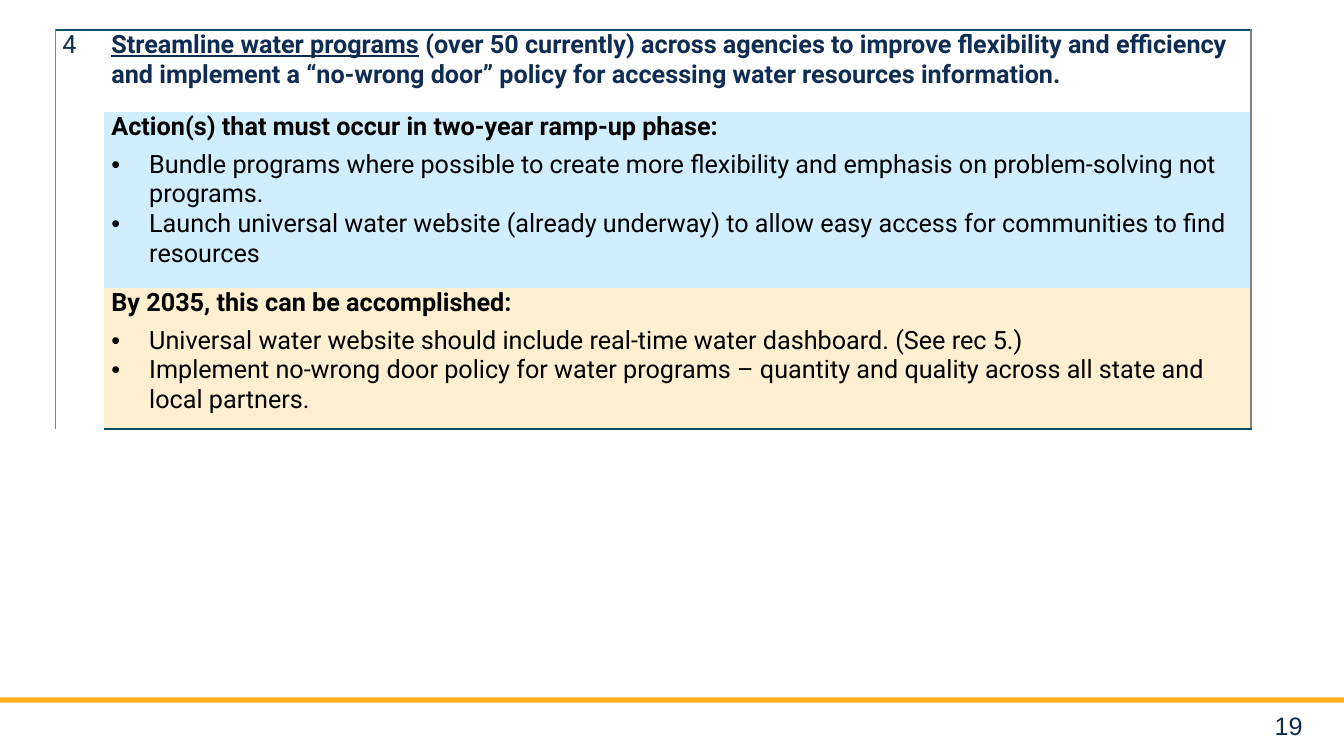
from dataclasses import dataclass

from lxml import etree
from pptx import Presentation
from pptx.dml.color import RGBColor
from pptx.enum import shapes, text
from pptx.oxml import ns
from pptx.util import Pt

COLORS = {
    "navy": "0F2D52",
    "black": "000000",
    "gold": "FCB31C",
    "sky": "D1EEFF",
    "cream": "FEEFD1",
    "rule": "074F6A",
    "edge": "808080",
}
NO_STYLE_NO_GRID = "{2D5ABB26-0587-4C30-8999-92F81FD0307C}"
COLUMN_WIDTHS = (35, 819)
ROW_HEIGHTS = (58.5, 125.5, 101)
HANGING = 27


@dataclass(frozen=True)
class Phase:
    heading: str
    actions: tuple[str, ...]
    fill: str


PHASES = (
    Phase(
        "Action(s) that must occur in two-year ramp-up phase:",
        (
            "Bundle programs where possible to create more flexibility and "
            "emphasis on problem-solving not programs.",
            "Launch universal water website (already underway) to allow easy "
            "access for communities to find resources",
        ),
        "sky",
    ),
    Phase(
        "By 2035, this can be accomplished:",
        (
            "Universal water website should include real-time water dashboard. (See rec 5.)",
            "Implement no-wrong door policy for water programs – quantity and "
            "quality across all state and local partners.",
        ),
        "cream",
    ),
)


def rgb(name: str) -> RGBColor:
    return RGBColor.from_string(COLORS[name])


def write(paragraph, words: str, *, color: str = "navy", font: str = "Roboto",
          bold: bool = False, underline: bool = False, after: float = 0) -> None:
    paragraph.space_after = Pt(after)
    run = paragraph.add_run()
    run.text = words
    run.font.name = font
    run.font.size = Pt(18)
    run.font.bold = bold
    run.font.underline = underline
    run.font.color.rgb = rgb(color)


def add_bullet(paragraph) -> None:
    properties = paragraph._p.get_or_add_pPr()
    properties.set("marL", str(Pt(HANGING)))
    properties.set("indent", str(-Pt(HANGING)))
    etree.SubElement(properties, ns.qn("a:buFont"), typeface="Arial")
    etree.SubElement(properties, ns.qn("a:buChar"), char="•")


def set_borders(cell, sides: dict[str, tuple[str, float]]) -> None:
    """Draw the given sides (L, R, T, B) and clear the others."""
    properties = cell._tc.get_or_add_tcPr()
    for position, side in enumerate("LRTB"):
        line = etree.Element(ns.qn(f"a:ln{side}"))
        properties.insert(position, line)
        if side in sides:
            color, width = sides[side]
            line.set("w", str(Pt(width)))
            fill = etree.SubElement(line, ns.qn("a:solidFill"))
            etree.SubElement(fill, ns.qn("a:srgbClr"), val=COLORS[color])
        else:
            line.set("w", "0")
            etree.SubElement(line, ns.qn("a:noFill"))


def format_cells(table) -> None:
    """Set margins, fills and the outer frame of the table."""
    last = len(ROW_HEIGHTS) - 1
    for row in range(last + 1):
        for column in range(len(COLUMN_WIDTHS)):
            cell = table.cell(row, column)
            cell.margin_left = cell.margin_right = Pt(5)
            cell.margin_top = cell.margin_bottom = Pt(0)
            if row and column:
                cell.fill.solid()
                cell.fill.fore_color.rgb = rgb(PHASES[row - 1].fill)
            else:
                cell.fill.background()
            sides = {"R" if column else "L": ("edge", 1)}
            if row == 0:
                sides["T"] = ("rule", 1.5)
            if row == last:
                sides["B"] = ("rule", 1.5)
            set_borders(cell, sides)


def add_recommendation(slide) -> None:
    table = slide.shapes.add_table(
        len(ROW_HEIGHTS), len(COLUMN_WIDTHS), Pt(39.6), Pt(21.6),
        Pt(sum(COLUMN_WIDTHS)), Pt(sum(ROW_HEIGHTS))).table
    table.first_row = table.horz_banding = False
    table._tbl.tblPr.find(ns.qn("a:tableStyleId")).text = NO_STYLE_NO_GRID
    for column, width in zip(table.columns, COLUMN_WIDTHS):
        column.width = Pt(width)
    for row, height in zip(table.rows, ROW_HEIGHTS):
        row.height = Pt(height)
    format_cells(table)

    number = table.cell(0, 0)
    number.merge(table.cell(len(ROW_HEIGHTS) - 1, 0))
    write(number.text_frame.paragraphs[0], "4", after=6)

    summary = table.cell(0, 1).text_frame.paragraphs[0]
    write(summary, "Streamline water programs", bold=True, underline=True, after=6)
    write(summary, " (over 50 currently) across agencies to improve flexibility and "
          "efficiency and implement a “no-wrong door” policy for accessing water "
          "resources information.", bold=True, after=6)

    for row, phase in enumerate(PHASES, start=1):
        frame = table.cell(row, 1).text_frame
        write(frame.paragraphs[0], phase.heading, color="black", bold=True, after=6)
        for action in phase.actions:
            item = frame.add_paragraph()
            add_bullet(item)
            write(item, action, color="black")


def add_footer(slide) -> None:
    band = slide.shapes.add_shape(
        shapes.MSO_SHAPE.RECTANGLE, Pt(-13), Pt(498.2), Pt(983), Pt(3.8))
    band.shadow.inherit = False
    band.fill.solid()
    band.fill.fore_color.rgb = rgb("gold")
    band.line.fill.background()

    page = slide.shapes.add_textbox(Pt(869.8), Pt(504), Pt(67.7), Pt(25.2)).text_frame
    page.word_wrap = True
    page.margin_top = page.margin_bottom = Pt(0)
    page.vertical_anchor = text.MSO_ANCHOR.BOTTOM
    page.paragraphs[0].alignment = text.PP_ALIGN.RIGHT
    write(page.paragraphs[0], "19", font="Arial")


def main() -> None:
    deck = Presentation()
    deck.slide_width, deck.slide_height = Pt(960), Pt(540)
    slide = deck.slides.add_slide(deck.slide_layouts[6])
    add_footer(slide)
    add_recommendation(slide)
    deck.save("out.pptx")


if __name__ == "__main__":
    main()
